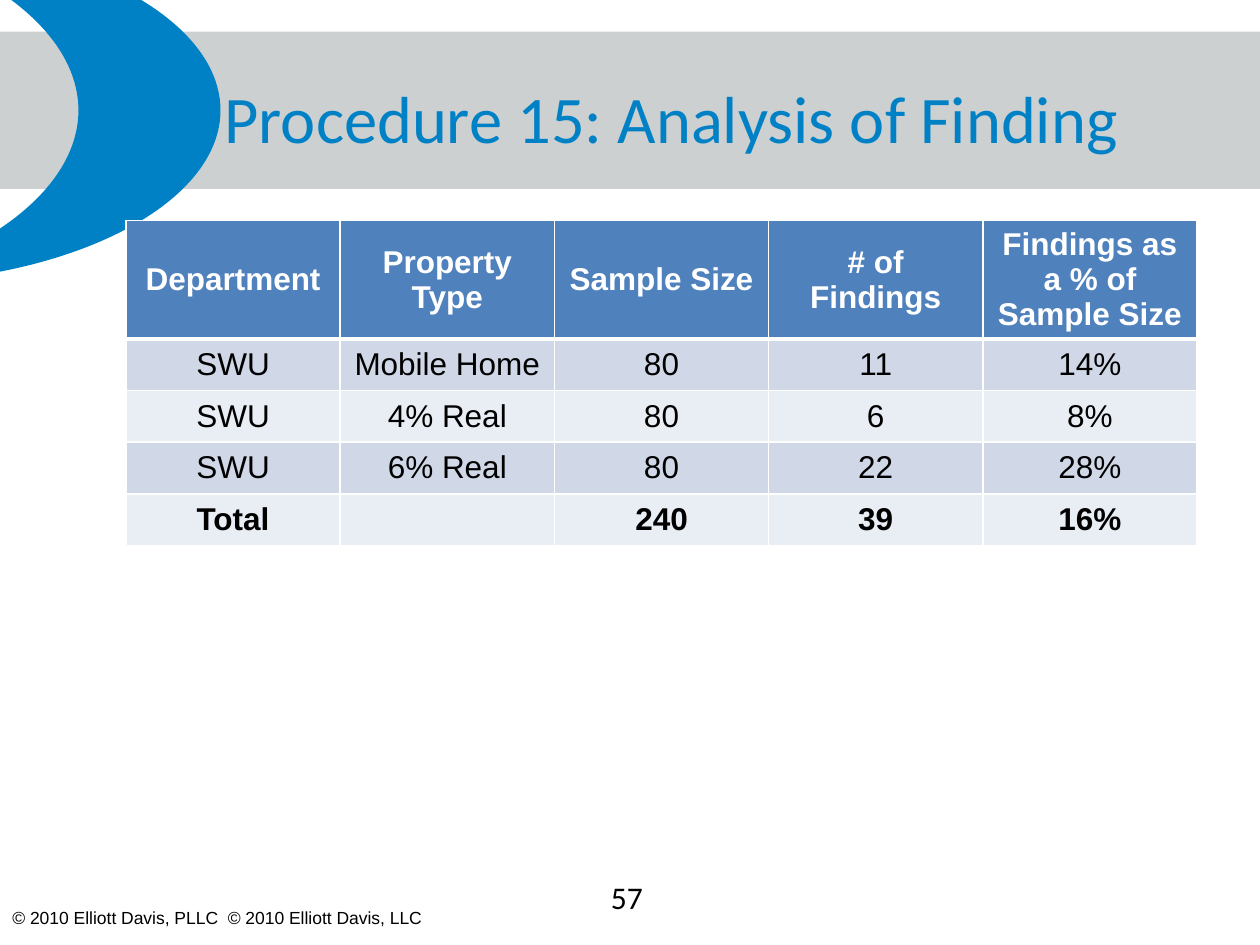
from pptx import Presentation
from pptx.dml.color import RGBColor
from pptx.enum.shapes import MSO_SHAPE as Shape
from pptx.enum.text import MSO_ANCHOR as Anchor, PP_ALIGN as Align
from pptx.oxml.ns import qn
from pptx.util import Inches, Pt
from lxml.etree import SubElement as add_node

WHITE = RGBColor(0xFF, 0xFF, 0xFF)
BLACK = RGBColor(0, 0, 0)
BLUE = RGBColor(0x00, 0x81, 0xC6)
GREY = RGBColor(0xC8, 0xCB, 0xCB)
HEAD = RGBColor(0x4F, 0x81, 0xBD)
BANDS = RGBColor(0xD0, 0xD8, 0xE8), RGBColor(0xE9, 0xED, 0xF4)

ROWS = [
    ["Department", "Property Type", "Sample Size", "# of Findings",
     "Findings as a % of Sample Size"],
    ["SWU", "Mobile Home", "80", "11", "14%"],
    ["SWU", "4% Real", "80", "6", "8%"],
    ["SWU", "6% Real", "80", "22", "28%"],
    ["Total", "", "240", "39", "16%"],
]


def write(frame, text, size=18, font="Arial", color=BLACK, bold=False,
          align=Align.LEFT):
    para = frame.paragraphs[0]
    para.alignment = align
    run = para.add_run()
    run.text = text
    run.font.size = Pt(size)
    run.font.name = font
    run.font.color.rgb = color
    run.font.bold = bold


def add_label(slide, box, text, wrap=True, **style):
    frame = slide.shapes.add_textbox(*map(Inches, box)).text_frame
    frame.word_wrap = wrap
    write(frame, text, **style)


def add_block(slide, kind, box, color, alpha=None):
    shape = slide.shapes.add_shape(kind, *map(Inches, box))
    shape.shadow.inherit = False
    shape.fill.solid()
    shape.fill.fore_color.rgb = color
    shape.line.fill.background()
    if alpha:
        tint = shape.fill._xPr.find(".//" + qn("a:srgbClr"))
        add_node(tint, qn("a:alpha"), val=str(alpha * 1000))
    return shape


def set_title(slide, box, text, **style):
    title = slide.shapes.title
    title.left, title.top, title.width, title.height = map(Inches, box)
    title.text_frame.vertical_anchor = Anchor.MIDDLE
    write(title.text_frame, text, align=Align.CENTER, **style)
    # Bring the title in front of the band
    slide.shapes._spTree.append(title._element)


def set_edges(cell, low):
    props = cell._tc.get_or_add_tcPr()
    for side, width in (("L", 1), ("R", 1), ("T", 1), ("B", low)):
        edge = add_node(props, qn("a:ln" + side), w=str(Pt(width)))
        paint = add_node(edge, qn("a:solidFill"))
        add_node(paint, qn("a:srgbClr"), val=str(WHITE))


def add_grid(slide, rows, box):
    frame = slide.shapes.add_table(len(rows), len(rows[0]), *map(Inches, box))
    table = frame.table
    for r, row in enumerate(rows):
        first, last = r == 0, r == len(rows) - 1
        table.rows[r].height = Inches(0.94 if first else 0.41)
        for c, text in enumerate(row):
            cell = table.cell(r, c)
            cell.vertical_anchor = Anchor.MIDDLE
            set_edges(cell, 3 if first else 1)
            cell.fill.solid()
            cell.fill.fore_color.rgb = HEAD if first else BANDS[(r - 1) % 2]
            if text:
                write(cell.text_frame, text, bold=first or last,
                      color=WHITE if first else BLACK, align=Align.CENTER)


def main():
    deck = Presentation()
    deck.slide_width, deck.slide_height = Inches(10), Inches(7.5)
    slide = deck.slides.add_slide(deck.slide_layouts[5])

    # Band and crescent
    add_block(slide, Shape.RECTANGLE, (0, 0.25, 10, 1.25), GREY, alpha=90)
    moon = add_block(slide, Shape.MOON, (-1, -0.5, 2.75, 2.75), BLUE)
    moon.rotation = 180
    moon.adjustments[0] = 0.41

    # Footer
    add_label(slide, (0, 7.15, 3.58, 0.27),
              "© 2010 Elliott Davis, PLLC  © 2010 Elliott Davis, LLC",
              wrap=False, size=10)

    # Title and findings
    set_title(slide, (0.83, 0.3, 9, 1.25), "Procedure 15: Analysis of Finding",
              size=38, font="Calibri", color=BLUE)
    add_grid(slide, ROWS, (1, 1.75, 8.5, 2.58))

    # Page number
    add_label(slide, (4.75, 6.92, 0.5, 0.4), "57", font="Calibri")

    deck.save("out.pptx")


if __name__ == "__main__":
    main()
